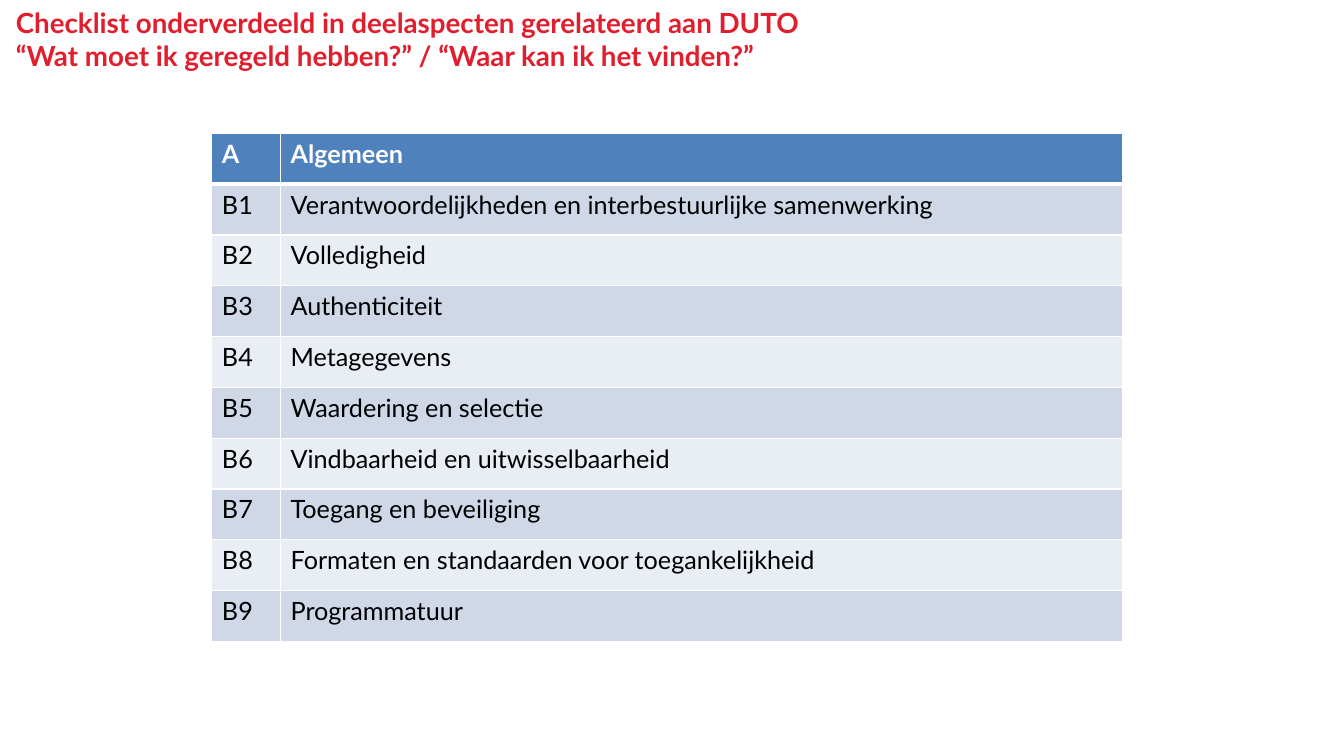
from lxml import etree
from pptx import Presentation
from pptx.dml.color import RGBColor
from pptx.enum.text import MSO_ANCHOR
from pptx.oxml.ns import qn
from pptx.util import Cm, Pt

MIDDLE = MSO_ANCHOR.MIDDLE
BLANK = 6
COLORS = {
    "title": "E11E2D",
    "head": "4F81BD",
    "odd": "D0D8E8",
    "even": "E9EDF4",
    "white": "FFFFFF",
    "black": "000000",
}
TITLE = (
    "Checklist onderverdeeld in deelaspecten gerelateerd aan DUTO\v"
    "“Wat moet ik geregeld hebben?” / “Waar kan ik het vinden?”"
)
HEAD = "Algemeen"
TOPICS = [
    "Verantwoordelijkheden en interbestuurlijke samenwerking",
    "Volledigheid",
    "Authenticiteit",
    "Metagegevens",
    "Waardering en selectie",
    "Vindbaarheid en uitwisselbaarheid",
    "Toegang en beveiliging",
    "Formaten en standaarden voor toegankelijkheid",
    "Programmatuur",
]
WIDTHS = [1.73, 21.22]
ROW = 1.28


def rgb(name):
    return RGBColor.from_string(COLORS[name])


def style(frame, color, **form):
    font = frame.paragraphs[0].font
    for key, value in {"name": "Lato", **form}.items():
        setattr(font, key, value)
    font.color.rgb = rgb(color)


def add_title(slide):
    box = slide.shapes.add_textbox(Cm(0.15), Cm(0.38), Cm(26.6), Cm(1.22))
    frame = box.text_frame
    frame.word_wrap = True
    frame.vertical_anchor = MIDDLE
    frame.text = TITLE
    style(frame, "title", size=Pt(19.8), bold=True)


def add_edges(cell, top, bottom):
    """Draw white borders; top and bottom are widths in points."""
    props = cell._tc.get_or_add_tcPr()
    for side, width in zip("LRTB", (1, 1, top, bottom)):
        line = etree.SubElement(props, qn(f"a:ln{side}"), w=str(Pt(width)))
        fill = etree.SubElement(line, qn("a:solidFill"))
        etree.SubElement(fill, qn("a:srgbClr"), val=COLORS["white"])


def fill_cell(cell, text, row):
    head = row == 0
    add_edges(cell, top=3 if row == 1 else 1, bottom=3 if head else 1)
    cell.fill.solid()
    cell.fill.fore_color.rgb = rgb("head" if head else "odd" if row % 2 else "even")
    cell.text = text
    style(cell.text_frame, "white" if head else "black", size=Pt(18), bold=head)


def add_list(slide):
    rows = [("A", HEAD)] + [(f"B{i}", topic) for i, topic in enumerate(TOPICS, 1)]
    table = slide.shapes.add_table(
        len(rows), len(WIDTHS), Cm(5.34), Cm(3.36),
        Cm(sum(WIDTHS)), Cm(ROW * len(rows)),
    ).table
    for col, width in zip(table.columns, WIDTHS):
        col.width = Cm(width)
    for i, texts in enumerate(rows):
        table.rows[i].height = Cm(ROW)
        for j, text in enumerate(texts):
            fill_cell(table.cell(i, j), text, i)


def main():
    deck = Presentation()
    deck.slide_width, deck.slide_height = Cm(33.87), Cm(19.05)
    slide = deck.slides.add_slide(deck.slide_layouts[BLANK])
    add_title(slide)
    add_list(slide)
    deck.save("out.pptx")


if __name__ == "__main__":
    main()
